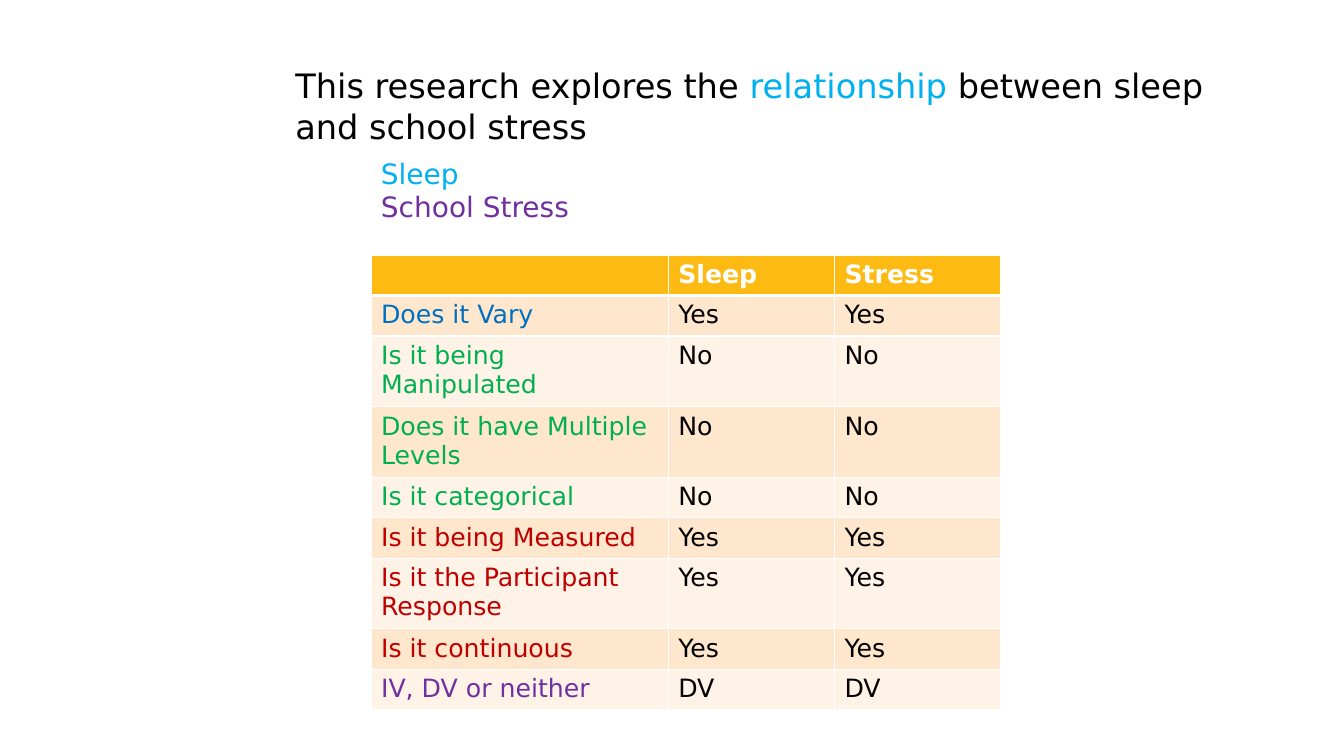
from lxml.etree import SubElement
from pptx import Presentation
from pptx.dml.color import RGBColor
from pptx.enum.text import MSO_ANCHOR, MSO_AUTO_SIZE, PP_ALIGN
from pptx.oxml.ns import qn
from pptx.util import Cm, Pt

COLORS = {
    "black": "000000", "white": "FFFFFF", "sky": "00B0F0", "purple": "7030A0",
    "blue": "0070C0", "green": "00B050", "red": "C00000",
    "header": "FDBA12", "band": "FEE7CC", "pale": "FFF3E7",
}
FONT = "DejaVu Sans"
ONE_LINE, TWO_LINES = 1.02, 1.78
HEADER = ("", "Sleep", "Stress")
QUESTIONS = [
    ("Does it Vary", "Yes", "blue", ONE_LINE),
    ("Is it being Manipulated", "No", "green", TWO_LINES),
    ("Does it have Multiple Levels", "No", "green", TWO_LINES),
    ("Is it categorical", "No", "green", ONE_LINE),
    ("Is it being Measured", "Yes", "red", ONE_LINE),
    ("Is it the Participant Response", "Yes", "red", TWO_LINES),
    ("Is it continuous", "Yes", "red", ONE_LINE),
    ("IV, DV or neither", "DV", "purple", ONE_LINE),
]


def rgb(name):
    return RGBColor.from_string(COLORS[name])


def add_run(p, text, color, size, bold=False):
    r = p.add_run()
    r.text = text
    for key, value in {"name": FONT, "size": Pt(size), "bold": bold}.items():
        setattr(r.font, key, value)
    r.font.color.rgb = rgb(color)


def set_borders(cell, bottom):
    tcPr = cell._tc.get_or_add_tcPr()
    for i, (side, width) in enumerate(zip("LRTB", (1, 1, 1, bottom))):
        ln = SubElement(tcPr, qn(f"a:ln{side}"), w=str(Pt(width)))
        fill = SubElement(ln, qn("a:solidFill"))
        SubElement(fill, qn("a:srgbClr"), val=COLORS["white"])
        tcPr.insert(i, ln)


def fill_cell(cell, text, color, fill, bold=False, bottom=1):
    cell.fill.solid()
    cell.fill.fore_color.rgb = rgb(fill)
    set_borders(cell, bottom)
    if text:
        add_run(cell.text_frame.paragraphs[0], text, color, 18, bold)


def add_title(s, parts):
    sp = s.shapes.title
    box = {"left": Cm(7.19), "top": Cm(1.52), "width": Cm(24.18), "height": Cm(2.31)}
    for key, value in box.items():
        setattr(sp, key, value)
    tf = sp.text_frame
    frame = {"word_wrap": True, "vertical_anchor": MSO_ANCHOR.TOP,
             "auto_size": MSO_AUTO_SIZE.SHAPE_TO_FIT_TEXT}
    for key, value in frame.items():
        setattr(tf, key, value)
    p = tf.paragraphs[0]
    p.alignment = PP_ALIGN.LEFT
    for text, color in parts:
        add_run(p, text, color, 24)


def add_variables(s, lines):
    tf = s.shapes.add_textbox(Cm(9.35), Cm(3.81), Cm(14.96), Cm(1.96)).text_frame
    tf.word_wrap = True
    tf.auto_size = MSO_AUTO_SIZE.SHAPE_TO_FIT_TEXT
    for i, (text, color) in enumerate(lines):
        p = tf.add_paragraph() if i else tf.paragraphs[0]
        add_run(p, text, color, 20)


def add_checklist(s):
    widths = (7.49, 4.19, 4.19)
    heights = [1.0] + [q[3] for q in QUESTIONS]
    table = s.shapes.add_table(len(heights), len(widths), Cm(9.35), Cm(6.43),
                               Cm(sum(widths)), Cm(sum(heights))).table
    table.horz_banding = False
    for column, width in zip(table.columns, widths):
        column.width = Cm(width)
    for row, height in zip(table.rows, heights):
        row.height = Cm(height)
    for c, text in enumerate(HEADER):
        fill_cell(table.cell(0, c), text, "white", "header", bold=True, bottom=3)
    for r, (question, answer, color, _) in enumerate(QUESTIONS, 1):
        fill = "band" if r % 2 else "pale"
        fill_cell(table.cell(r, 0), question, color, fill)
        for c in (1, 2):
            fill_cell(table.cell(r, c), answer, "black", fill)


def main():
    prs = Presentation()
    prs.slide_width, prs.slide_height = Cm(33.87), Cm(19.05)
    s = prs.slides.add_slide(prs.slide_layouts[5])
    add_title(s, [("This research explores the ", "black"), ("relationship", "sky"),
                  (" between sleep and school stress", "black")])
    add_variables(s, [("Sleep", "sky"), ("School Stress", "purple")])
    add_checklist(s)
    prs.save("out.pptx")


if __name__ == "__main__":
    main()
